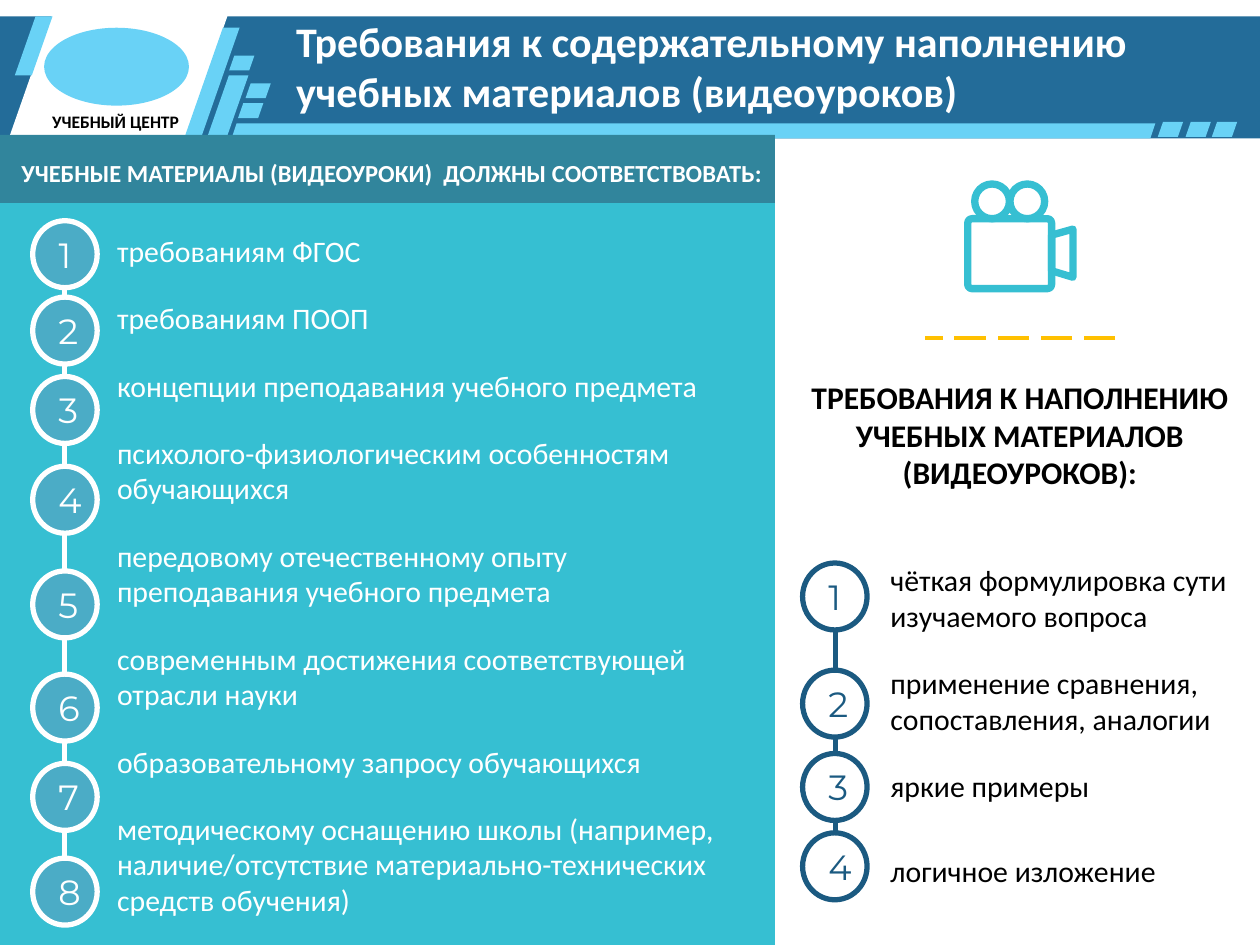
"""Build a slide listing the requirements for the content of video lessons."""
from lxml import etree
from pptx import Presentation
from pptx import util as u
from pptx.dml import color
from pptx.enum import dml, shapes, text
from pptx.oxml import ns

COLORS = {
    "white": "FFFFFF", "black": "000000", "band": "236C99", "sky": "69D2F6",
    "panel": "36BFD2", "bar": "31859C", "badge": "4BACC6", "navy": "1B5A81",
    "dash": "FFC000",
}
LEFT_ITEMS = [
    "требованиям ФГОС",
    "требованиям ПООП",
    "концепции преподавания учебного предмета",
    "психолого-физиологическим особенностям обучающихся",
    "передовому отечественному опыту преподавания учебного предмета",
    "современным достижения соответствующей отрасли науки",
    "образовательному запросу обучающихся",
    "методическому оснащению школы (например, наличие/отсутствие "
    "материально-технических средств обучения)",
]
RIGHT_ITEMS = [
    "чёткая формулировка сути изучаемого вопроса",
    "применение сравнения, сопоставления, аналогии",
    "яркие примеры",
    "логичное изложение",
]
LEFT_TOPS = [4.45, 5.99, 7.59, 9.4, 11.51, 13.59, 15.39, 17.3]
RIGHT_TOPS = [11.35, 13.51, 15.19, 16.79]
SLANTS = [
    (0.3, 0.33, 0.76, 1.19, 0.55),
    (3.71, 0.56, 1.12, 2.24, 0.7),
    (4.17, 1.52, 0.84, 1.27, 0.53),
    (4.67, 2.49, 18.62, 0.3, 0.33),
]
CHIPS = [(4.62, 1.12), (4.8, 2.08), (4.95, 1.68),
         (23.34, 2.46), (23.9, 2.46), (24.43, 2.46)]


def rgb(name):
    """Return the named colour."""
    return color.RGBColor.from_string(COLORS[name])


def paint(sp, fill=None, line=None, width=3):
    """Set fill and outline of a shape and drop its shadow."""
    sp.shadow.inherit = False
    if fill:
        sp.fill.solid()
        sp.fill.fore_color.rgb = rgb(fill)
    else:
        sp.fill.background()
    if line:
        sp.line.color.rgb = rgb(line)
        sp.line.width = u.Pt(width)
    else:
        sp.line.fill.background()


def add_shape(s, kind, box, fill=None, line=None, width=3, adj=None):
    """Add a preset shape."""
    sp = s.shapes.add_shape(kind, *map(u.Cm, box))
    if adj is not None:
        sp.adjustments[0] = adj
    paint(sp, fill, line, width)
    return sp


def add_text(s, box, items, size, ink, bold=False, center=False, after=0, wrap=True):
    """Add a text box with one paragraph per item."""
    tf = s.shapes.add_textbox(*map(u.Cm, box)).text_frame
    tf.word_wrap = wrap
    for i, item in enumerate(items):
        p = tf.add_paragraph() if i else tf.paragraphs[0]
        p.text = item
        p.alignment = text.PP_ALIGN.CENTER if center else text.PP_ALIGN.LEFT
        p.space_after = u.Pt(after)
        p.font.name, p.font.size, p.font.bold = "Calibri", u.Pt(size), bold
        p.font.color.rgb = rgb(ink)
    return tf


def add_line(s, x1, y1, x2, y2, ink, width=3):
    """Add a straight line without shadow."""
    ln = s.shapes.add_connector(shapes.MSO_CONNECTOR.STRAIGHT, *map(u.Cm, (x1, y1, x2, y2)))
    ln.line.color.rgb = rgb(ink)
    ln.line.width = u.Pt(width)
    etree.SubElement(ln._element.spPr, ns.qn("a:effectLst"))
    return ln


def add_badges(s, x, tops, fill, ink):
    """Add a column of numbered circles."""
    for number, top in enumerate(tops, 1):
        sp = add_shape(s, shapes.MSO_SHAPE.OVAL, (x, top, 1.3, 1.35), fill, ink)
        tf = sp.text_frame
        tf.margin_left = tf.margin_right = u.Cm(0.33)
        tf.margin_top = tf.margin_bottom = u.Cm(0.15)
        tf.vertical_anchor = text.MSO_ANCHOR.MIDDLE
        p = tf.paragraphs[0]
        p.text = str(number)
        p.alignment = text.PP_ALIGN.CENTER
        p.font.name, p.font.size = "Montserrat", u.Pt(20)
        p.font.color.rgb = rgb(ink)


def add_header(s):
    """Add the title band with its slanted decoration."""
    slant = shapes.MSO_SHAPE.PARALLELOGRAM
    add_shape(s, shapes.MSO_SHAPE.RECTANGLE, (0, 0.33, 25.4, 2.46), "band")
    add_shape(s, slant, (0, 0, 4.7, 3.3), "white", adj=0.35)
    add_shape(s, shapes.MSO_SHAPE.OVAL, (0.89, 0.56, 2.92, 1.57), "sky")
    add_text(s, (0.74, 2.11, 3.18, 0.69), ["УЧЕБНЫЙ ЦЕНТР"], 10, "black",
             bold=True, center=True, wrap=False)
    for *box, adj in SLANTS:
        add_shape(s, slant, box, "sky", adj=adj)
    for x, y in CHIPS:
        add_shape(s, slant, (x, y, 0.51, 0.3), "sky", adj=0.35)
    add_text(s, (5.72, 0.18, 19.1, 2.31),
             ["Требования к содержательному наполнению учебных материалов (видеоуроков)"],
             24, "white", bold=True)


def add_left_panel(s):
    """Add the coloured panel with eight requirements."""
    rect = shapes.MSO_SHAPE.RECTANGLE
    add_shape(s, rect, (0, 2.77, 15.62, 16.28), "panel")
    add_shape(s, rect, (0, 2.72, 15.62, 1.37), "bar")
    add_text(s, (-0.61, 3.07, 17.02, 0.86),
             ["УЧЕБНЫЕ МАТЕРИАЛЫ (ВИДЕОУРОКИ)  ДОЛЖНЫ СООТВЕТСТВОВАТЬ:"],
             14, "white", bold=True, center=True, after=18)
    add_text(s, (2.11, 4.57, 13.18, 14.76), LEFT_ITEMS, 17, "white", after=18)
    add_line(s, 1.3, 5.28, 1.3, 18.19, "white")
    add_badges(s, 0.66, LEFT_TOPS, "badge", "white")


def add_right_panel(s):
    """Add the heading and the four content requirements."""
    dashes = add_line(s, 22.48, 6.81, 18.64, 6.81, "dash", 2.25)
    dashes.line.dash_style = dml.MSO_LINE.LONG_DASH
    add_text(s, (15.9, 7.49, 9.32, 3.33),
             ["ТРЕБОВАНИЯ К НАПОЛНЕНИЮ УЧЕБНЫХ МАТЕРИАЛОВ (ВИДЕОУРОКОВ):"],
             18, "black", bold=True, center=True)
    tf = add_text(s, (17.7, 11.2, 8.2, 6.91), RIGHT_ITEMS, 17, "black", after=18)
    tf.paragraphs[-1].line_spacing = 1.5
    add_line(s, 16.84, 12.19, 16.84, 17.88, "navy")
    add_badges(s, 16.18, RIGHT_TOPS, "white", "navy")


def add_camera(s):
    """Add the outlined film camera."""
    for x in (19.65, 20.36):
        add_shape(s, shapes.MSO_SHAPE.OVAL, (x, 3.71, 0.7, 0.7), line="panel", width=4.2)
    add_shape(s, shapes.MSO_SHAPE.ROUNDED_RECTANGLE, (19.51, 4.41, 1.69, 1.41),
              line="panel", width=4.2, adj=0.06)
    horn = [(21.2, 4.74), (21.63, 4.62), (21.63, 5.59), (21.2, 5.46)]
    start, *rest = [(u.Cm(x), u.Cm(y)) for x, y in horn]
    fb = s.shapes.build_freeform(*start)
    fb.add_line_segments(rest, close=True)
    paint(fb.convert_to_shape(), line="panel", width=4.2)


def main():
    """Build and save the slide."""
    prs = Presentation()
    prs.slide_width, prs.slide_height = u.Cm(25.4), u.Cm(19.05)
    s = prs.slides.add_slide(prs.slide_layouts[6])
    add_header(s)
    add_left_panel(s)
    add_right_panel(s)
    add_camera(s)
    prs.save("out.pptx")


if __name__ == "__main__":
    main()
